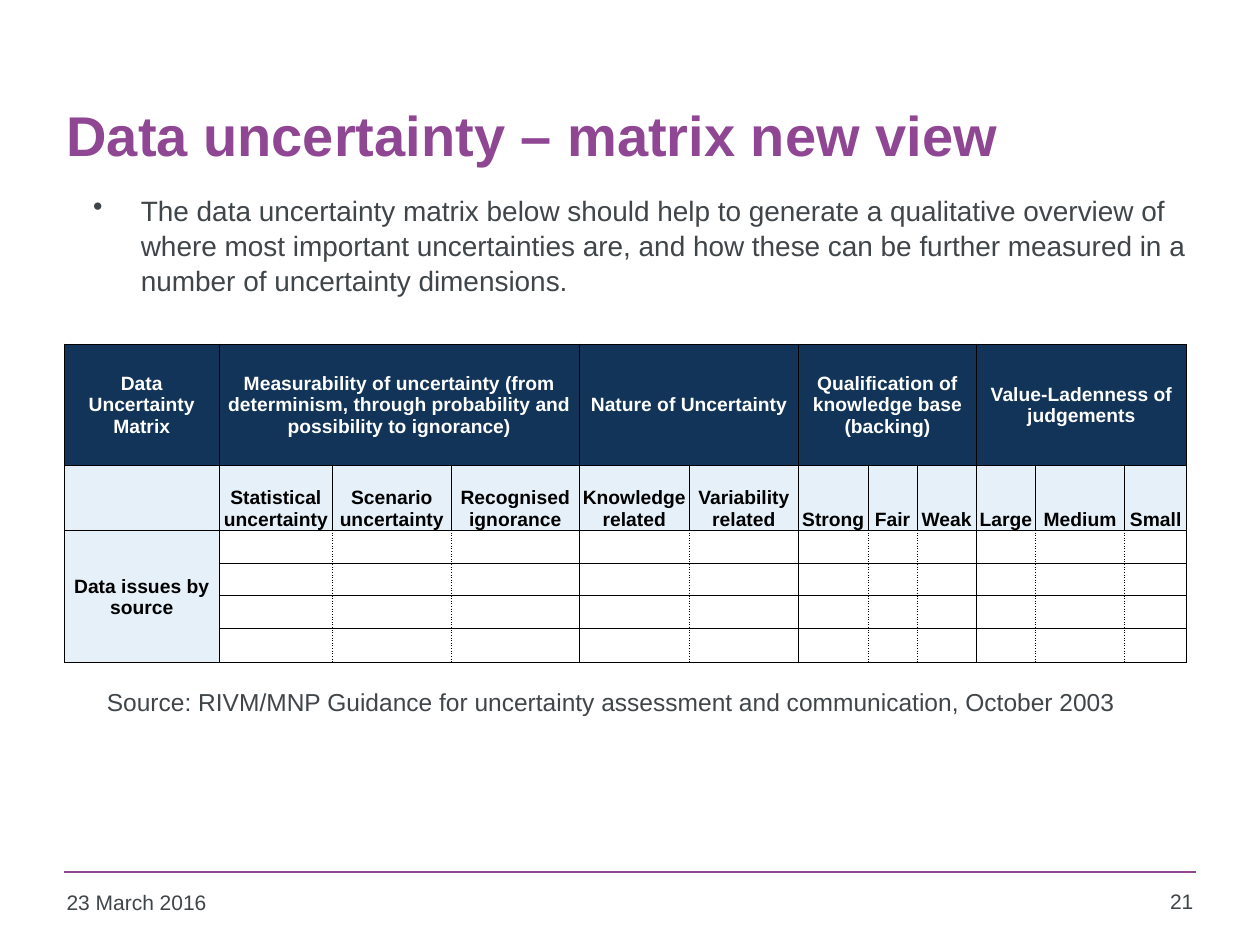
from dataclasses import dataclass

from lxml.etree import SubElement
from pptx import Presentation
from pptx.dml.color import RGBColor
from pptx.enum.shapes import MSO_CONNECTOR
from pptx.enum.text import MSO_ANCHOR, PP_ALIGN
from pptx.oxml.ns import qn
from pptx.util import Pt

PX = 9144  # 100 px to the inch
PURPLE = RGBColor(0x8F, 0x46, 0x93)
GREY = RGBColor(0x3F, 0x45, 0x48)
NAVY = RGBColor(0x11, 0x34, 0x58)
PALE = RGBColor(0xE5, 0xF0, 0xF9)
WHITE = RGBColor(0xFF, 0xFF, 0xFF)
BLACK = RGBColor(0, 0, 0)


@dataclass
class Label:
    text: str
    box: tuple[int, int, int, int]
    size: int
    color: RGBColor = GREY
    bold: bool = False
    align: PP_ALIGN = PP_ALIGN.LEFT
    anchor: MSO_ANCHOR = MSO_ANCHOR.TOP
    bullet: bool = False


@dataclass
class Group:
    head: str
    subs: list[str]


TITLE = Label("Data uncertainty – matrix new view", (43, 44, 907, 125), 32,
              PURPLE, bold=True, anchor=MSO_ANCHOR.MIDDLE)
INTRO = Label("The data uncertainty matrix below should help to generate a "
              "qualitative overview of where most important uncertainties are, "
              "and how these can be further measured in a number of "
              "uncertainty dimensions.", (64, 147, 900, 495), 16, bullet=True)
SOURCE = Label("Source: RIVM/MNP Guidance for uncertainty assessment and "
               "communication, October 2003", (75, 540, 890, 34), 14)
DATE = Label("23 March 2016", (43, 701, 220, 36), 12)
PAGE = Label("21", (886, 700, 71, 37), 12, align=PP_ALIGN.RIGHT)

GROUPS = [
    Group("Measurability of uncertainty (from determinism, through "
          "probability and possibility to ignorance)",
          ["Statistical uncertainty", "Scenario uncertainty",
           "Recognised ignorance"]),
    Group("Nature of Uncertainty", ["Knowledge related", "Variability related"]),
    Group("Qualification of knowledge base (backing)",
          ["Strong", "Fair", "Weak"]),
    Group("Value-Ladenness of judgements", ["Large", "Medium", "Small"]),
]
COLS = [123, 90, 94, 102, 87, 87, 55, 39, 47, 47, 71, 49]
ROWS = [96, 52, 26, 26, 26, 27]


def style(item, fmt: dict) -> None:
    for name, value in fmt.items():
        setattr(item, name, value)


def write(para, text: str, size: int, color: RGBColor, bold: bool) -> None:
    run = para.add_run()
    run.text = text
    style(run.font, {"name": "Arial", "size": Pt(size), "bold": bold})
    run.font.color.rgb = color


def add_label(slide, label: Label) -> None:
    frame = slide.shapes.add_textbox(*(n * PX for n in label.box)).text_frame
    style(frame, {"word_wrap": True, "vertical_anchor": label.anchor})
    para = frame.paragraphs[0]
    para.alignment = label.align
    if label.bullet:
        style(para, {"space_before": Pt(3), "line_spacing": 1.05})
        props = para._p.get_or_add_pPr()
        props.set("marL", str(38 * PX))
        props.set("indent", str(-38 * PX))
        SubElement(props, qn("a:buChar")).set("char", "•")
    write(para, label.text, label.size, label.color, label.bold)


def add_edges(cell, dots: set[str]) -> None:
    props = cell._tc.get_or_add_tcPr()
    for side in "LRTB":
        line = SubElement(props, qn(f"a:ln{side}"))
        line.set("w", str(Pt(0.5)))
        fill = SubElement(line, qn("a:solidFill"))
        SubElement(fill, qn("a:srgbClr")).set("val", str(BLACK))
        dash = "sysDot" if side in dots else "solid"
        SubElement(line, qn("a:prstDash")).set("val", dash)


def fill_cell(cell, text: str, color: RGBColor, anchor: MSO_ANCHOR) -> None:
    cell.vertical_anchor = anchor
    para = cell.text_frame.paragraphs[0]
    para.alignment = PP_ALIGN.CENTER
    write(para, text, 11, color, True)


def add_matrix(slide) -> None:
    table = slide.shapes.add_table(
        len(ROWS), len(COLS), 51 * PX, 273 * PX,
        sum(COLS) * PX, sum(ROWS) * PX).table
    style(table, {"first_row": False, "horz_banding": False})
    for col, width in zip(table.columns, COLS):
        col.width = width * PX
    for row, height in zip(table.rows, ROWS):
        row.height = height * PX

    # First and last column of each group bound the dotted lines
    starts, ends, col = {0}, {0}, 1
    for group in GROUPS:
        starts.add(col)
        col += len(group.subs)
        ends.add(col - 1)

    # Borders, fills and insets
    for r in range(len(ROWS)):
        for c in range(len(COLS)):
            cell = table.cell(r, c)
            dots = set()
            if r > 1:
                dots = {side for side, solid in (("L", starts), ("R", ends))
                        if c not in solid}
            add_edges(cell, dots)
            style(cell, {"margin_left": PX, "margin_right": PX,
                         "margin_top": PX, "margin_bottom": 0})
            para = cell.text_frame.paragraphs[0]
            para._p.get_or_add_endParaRPr().set("sz", "1100")
            if r > 1 and c > 0:
                cell.fill.background()
            else:
                cell.fill.solid()
                cell.fill.fore_color.rgb = PALE if r else NAVY

    # Headings
    fill_cell(table.cell(0, 0), "Data Uncertainty Matrix", WHITE,
              MSO_ANCHOR.MIDDLE)
    col = 1
    for group in GROUPS:
        last = col + len(group.subs) - 1
        head = table.cell(0, col)
        head.merge(table.cell(0, last))
        fill_cell(head, group.head, WHITE, MSO_ANCHOR.MIDDLE)
        for c, sub in enumerate(group.subs, col):
            fill_cell(table.cell(1, c), sub, BLACK, MSO_ANCHOR.BOTTOM)
        col = last + 1
    side = table.cell(2, 0)
    side.merge(table.cell(len(ROWS) - 1, 0))
    fill_cell(side, "Data issues by source", BLACK, MSO_ANCHOR.MIDDLE)


def add_rule(slide) -> None:
    rule = slide.shapes.add_connector(
        MSO_CONNECTOR.STRAIGHT, 51 * PX, 692 * PX, 949 * PX, 692 * PX)
    rule.line.color.rgb = PURPLE
    rule.line.width = Pt(1)
    SubElement(rule._element.spPr, qn("a:effectLst"))


def main() -> None:
    deck = Presentation()
    style(deck, {"slide_width": 1000 * PX, "slide_height": 750 * PX})
    slide = deck.slides.add_slide(deck.slide_layouts[6])
    add_rule(slide)
    for label in (TITLE, INTRO):
        add_label(slide, label)
    add_matrix(slide)
    for label in (SOURCE, DATE, PAGE):
        add_label(slide, label)
    deck.save("out.pptx")


if __name__ == "__main__":
    main()
